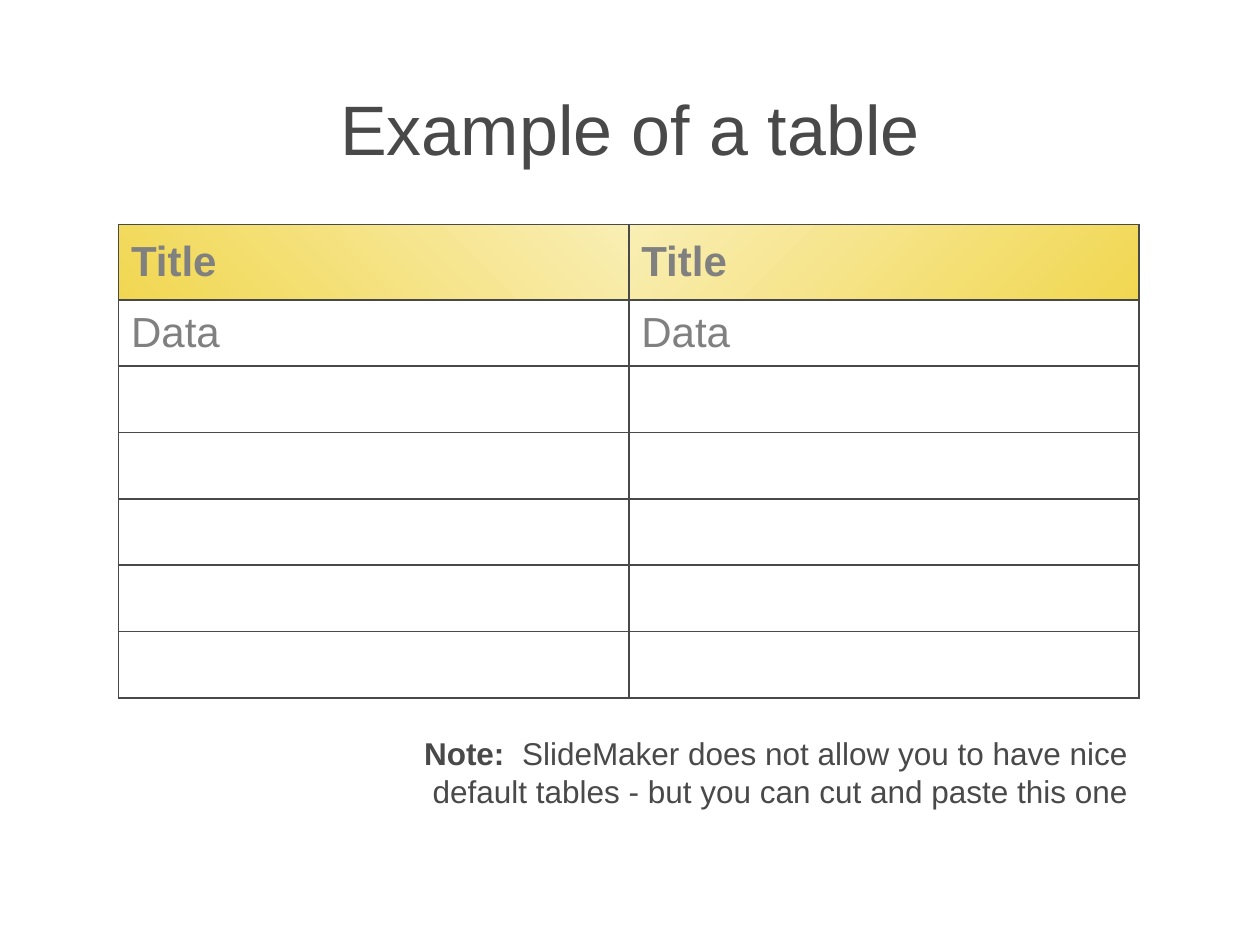
from lxml import etree
from pptx import Presentation
from pptx.dml.color import RGBColor
from pptx.enum.text import MSO_ANCHOR, PP_ALIGN
from pptx.oxml.ns import qn
from pptx.util import Inches, Pt

DARK = RGBColor(0x49, 0x49, 0x49)
GREY = RGBColor(0x80, 0x80, 0x80)
GOLD = RGBColor(0xF1, 0xD7, 0x51)
CREAM = RGBColor(0xF9, 0xEE, 0xB4)
LEFT, CENTER, RIGHT = PP_ALIGN.LEFT, PP_ALIGN.CENTER, PP_ALIGN.RIGHT
TOP, MIDDLE = MSO_ANCHOR.TOP, MSO_ANCHOR.MIDDLE
FONT = "Arial"
WIDTH, HEIGHT = Inches(10), Inches(7.5)


def write(p, text, size=18, color=DARK, bold=False, align=LEFT):
    """Add one formatted run to a paragraph."""
    p.alignment = align
    r = p.add_run()
    r.text = text
    r.font.name, r.font.size, r.font.bold = FONT, Pt(size), bold
    r.font.color.rgb = color


class SlideBuilder:
    """Places elements by shares of the slide's width and height."""

    def __init__(self, prs):
        self.s = prs.slides.add_slide(prs.slide_layouts[6])

    def frame(self, x, y, w, h):
        return int(x * WIDTH), int(y * HEIGHT), int(w * WIDTH), int(h * HEIGHT)

    def text(self, box, runs, anchor=TOP, **style):
        tf = self.s.shapes.add_textbox(*self.frame(*box)).text_frame
        tf.word_wrap = True
        tf.vertical_anchor = anchor
        for text, bold in runs:
            write(tf.paragraphs[0], text, bold=bold, **style)

    def border(self, cell, color=DARK, width=1):
        tc_pr = cell._tc.get_or_add_tcPr()
        for side in ("a:lnL", "a:lnR", "a:lnT", "a:lnB"):
            ln = etree.SubElement(tc_pr, qn(side), w=str(Pt(width)))
            fill = etree.SubElement(ln, qn("a:solidFill"))
            etree.SubElement(fill, qn("a:srgbClr"), val=str(color))

    def gradient(self, cell, angle):
        cell.fill.gradient()
        cell.fill.gradient_angle = angle
        for stop, color, position in zip(cell.fill.gradient_stops, (GOLD, CREAM), (0, 1)):
            stop.color.rgb, stop.position = color, position

    def table(self, box, rows, head_height, head_angles):
        shape = self.s.shapes.add_table(len(rows), len(rows[0]), *self.frame(*box))
        table = shape.table
        table.first_row = table.horz_banding = False
        head = int(head_height * HEIGHT)
        body = (shape.height - head) // (len(rows) - 1)
        for i, row in enumerate(rows):
            is_head = i == 0
            table.rows[i].height = head if is_head else body
            for j, text in enumerate(row):
                cell = table.cell(i, j)
                cell.vertical_anchor = MIDDLE
                self.border(cell)
                if is_head:
                    self.gradient(cell, head_angles[j])
                else:
                    cell.fill.background()
                if text:
                    write(cell.text_frame.paragraphs[0], text, size=24, color=GREY, bold=is_head)


def main():
    prs = Presentation()
    prs.slide_width, prs.slide_height = WIDTH, HEIGHT
    b = SlideBuilder(prs)

    # Title
    b.text((0.05, 0.39 / 7.5, 0.9, 1.25 / 7.5), [("Example of a table", False)],
           anchor=MIDDLE, size=40, align=CENTER)

    # Table: gold header fading towards the middle, one data row, five empty rows
    rows = [["Title"] * 2, ["Data"] * 2] + [[""] * 2] * 5
    b.table((0.094, 1.78 / 7.5, 0.81, 3.76 / 7.5), rows,
            head_height=0.08, head_angles=(45, 135))

    # Note under the table
    note = "SlideMaker does not allow you to have nice default tables - but you can cut and paste this one"
    b.text((0.278, 5.78 / 7.5, 0.627, 0.71 / 7.5), [("Note:  ", True), (note, False)],
           align=RIGHT)

    prs.save("out.pptx")


if __name__ == "__main__":
    main()
